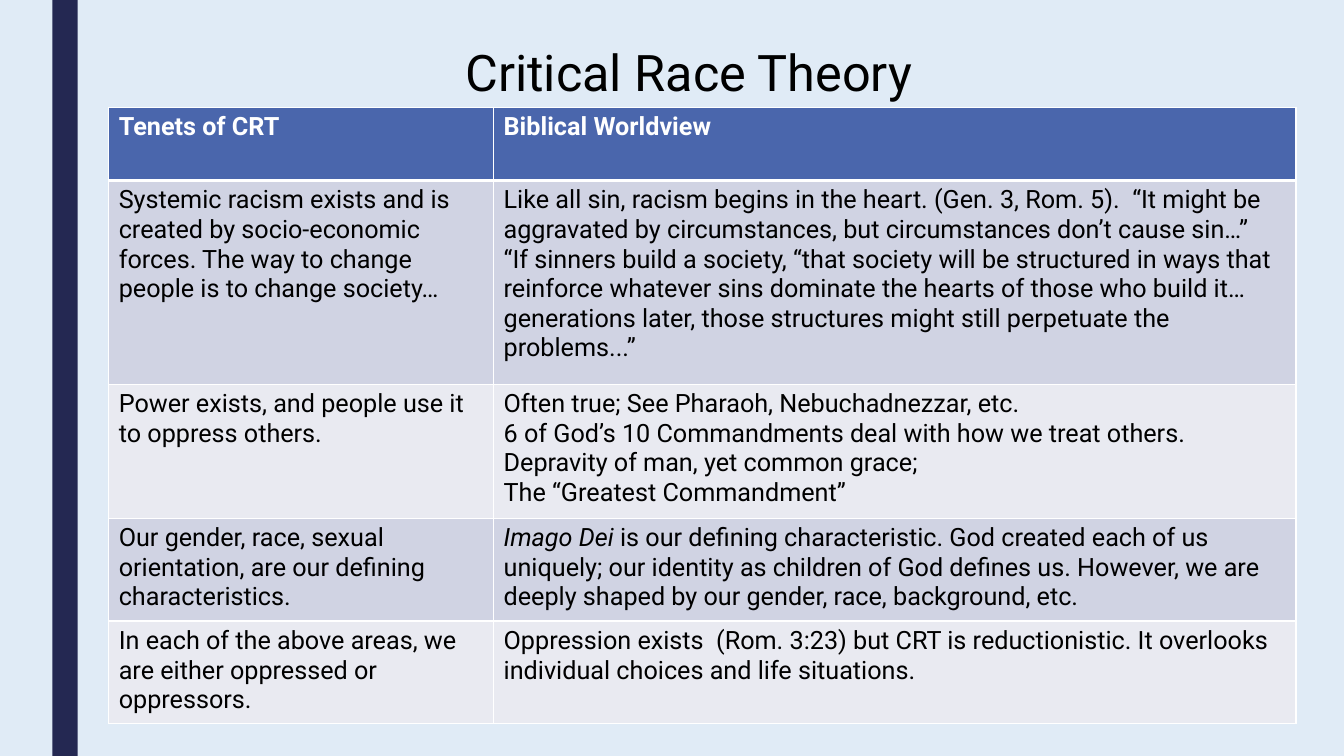
from dataclasses import dataclass

import pptx
import pptx.dml.color
import pptx.enum.shapes
import pptx.enum.text
import pptx.oxml
import pptx.oxml.ns
import pptx.slide
import pptx.table
import pptx.util
from pptx.dml.color import RGBColor
from pptx.util import Cm, Pt

FONT = "Roboto"
BACKGROUND = RGBColor(0xE0, 0xEB, 0xF6)
NAVY = RGBColor(0x24, 0x28, 0x52)
BLUE = RGBColor(0x4A, 0x66, 0xAC)
BAND_DARK = RGBColor(0xD0, 0xD3, 0xE3)
BAND_LIGHT = RGBColor(0xE9, 0xEA, 0xF1)
BLACK = RGBColor(0, 0, 0)
WHITE = RGBColor(0xFF, 0xFF, 0xFF)

COLUMN_WIDTHS = (9.7, 20.22)


@dataclass(frozen=True)
class Row:
    height: float
    tenet: str
    response: tuple[str, ...]
    italic_lead: str = ""


ROWS = (
    Row(1.85, "Tenets of CRT", ("Biblical Worldview",)),
    Row(
        5.13,
        "Systemic racism exists and is created by socio-economic forces. "
        "The way to change people is to change society…",
        (
            "Like all sin, racism begins in the heart. (Gen. 3, Rom. 5).  “It might be "
            "aggravated by circumstances, but circumstances don’t cause sin…”",
            "“If sinners build a society, “that society will be structured in ways that "
            "reinforce whatever sins dominate the hearts of those who build it… "
            "generations later, those structures might still perpetuate the problems...”",
        ),
    ),
    Row(
        3.38,
        "Power exists, and people use it to oppress others.",
        (
            "Often true; See Pharaoh, Nebuchadnezzar, etc.",
            "6 of God’s 10 Commandments deal with how we treat others. "
            "Depravity of man, yet common grace;",
            "The “Greatest Commandment”",
        ),
    ),
    Row(
        2.59,
        "Our gender, race, sexual orientation, are our defining characteristics.",
        (
            "is our defining characteristic. God created each of us uniquely; our identity "
            "as children of God defines us. However, we are deeply shaped by our gender, "
            "race, background, etc.",
        ),
        italic_lead="Imago Dei ",
    ),
    Row(
        2.59,
        "In each of the above areas, we are either oppressed or oppressors.",
        (
            "Oppression exists  (Rom. 3:23) but CRT is reductionistic. It overlooks "
            "individual choices and life situations.",
        ),
    ),
)


def set_borders(cell: pptx.table._Cell, top: float, bottom: float) -> None:
    """Add white borders, one point wide at the sides; call before setting the fill."""
    tc_pr = cell._tc.get_or_add_tcPr()
    for side, width in (("L", 1), ("R", 1), ("T", top), ("B", bottom)):
        tc_pr.append(
            pptx.oxml.parse_xml(
                f'<a:ln{side} {pptx.oxml.ns.nsdecls("a")} w="{Pt(width)}">'
                f'<a:solidFill><a:srgbClr val="{WHITE}"/></a:solidFill></a:ln{side}>'
            )
        )


def fill_cell(cell: pptx.table._Cell, texts: tuple[str, ...], italic_lead: str,
              color: RGBColor, bold: bool) -> None:
    tf = cell.text_frame
    for i, text in enumerate(texts):
        p = tf.add_paragraph() if i else tf.paragraphs[0]
        if i == 0 and italic_lead:
            r = p.add_run()
            r.text = italic_lead
            r.font.italic = True
        p.add_run().text = text
        p.font.name = FONT
        p.font.size = Pt(18)
        p.font.bold = bold
        p.font.color.rgb = color


def add_side_bar(s: pptx.slide.Slide) -> None:
    sp = s.shapes.add_shape(
        pptx.enum.shapes.MSO_SHAPE.RECTANGLE, Cm(1.32), 0, Cm(0.64), Cm(19.05)
    )
    sp.shadow.inherit = False
    sp.fill.solid()
    sp.fill.fore_color.rgb = NAVY
    sp.line.fill.background()


def add_title(s: pptx.slide.Slide, text: str) -> None:
    tf = s.shapes.add_textbox(Cm(3.88), Cm(0.91), Cm(26.97), Cm(1.8)).text_frame
    tf.word_wrap = True
    p = tf.paragraphs[0]
    p.text = text
    p.alignment = pptx.enum.text.PP_ALIGN.CENTER
    p.font.name = FONT
    p.font.size = Pt(36)
    p.font.color.rgb = BLACK


def add_comparison(s: pptx.slide.Slide) -> None:
    table = s.shapes.add_table(
        len(ROWS), len(COLUMN_WIDTHS), Cm(2.74), Cm(2.7),
        Cm(sum(COLUMN_WIDTHS)), Cm(sum(row.height for row in ROWS)),
    ).table
    for column, width in zip(table.columns, COLUMN_WIDTHS):
        column.width = Cm(width)
    for i, row in enumerate(ROWS):
        table.rows[i].height = Cm(row.height)
        header = i == 0
        band = BLUE if header else BAND_DARK if i % 2 else BAND_LIGHT
        contents = (((row.tenet,), ""), (row.response, row.italic_lead))
        for j, (texts, italic_lead) in enumerate(contents):
            cell = table.cell(i, j)
            set_borders(cell, top=3 if i == 1 else 1, bottom=3 if header else 1)
            cell.fill.solid()
            cell.fill.fore_color.rgb = band
            fill_cell(cell, texts, italic_lead, WHITE if header else BLACK, header)


def main() -> None:
    prs = pptx.Presentation()
    prs.slide_width, prs.slide_height = Cm(33.87), Cm(19.05)
    s = prs.slides.add_slide(prs.slide_layouts[6])
    s.background.fill.solid()
    s.background.fill.fore_color.rgb = BACKGROUND
    add_side_bar(s)
    add_title(s, "Critical Race Theory")
    add_comparison(s)
    prs.save("out.pptx")


if __name__ == "__main__":
    main()
